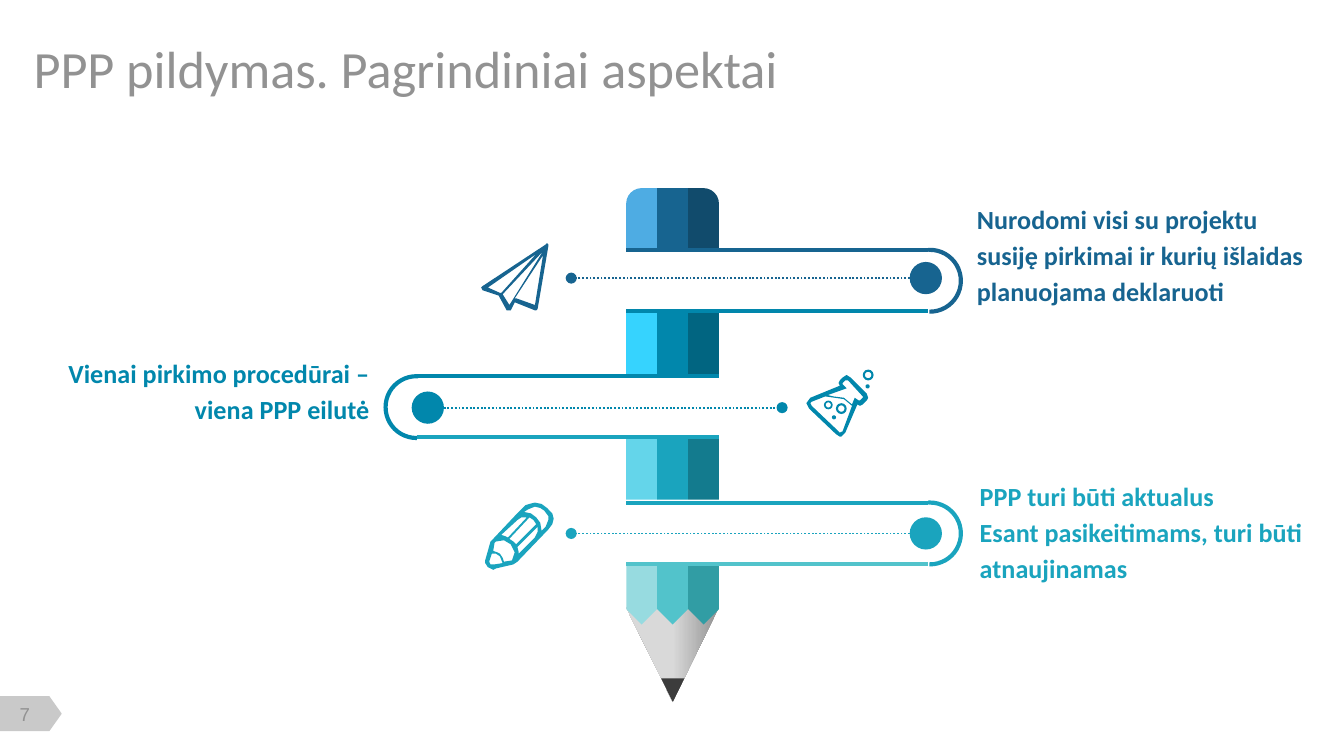
from lxml import etree
from pptx import Presentation
from pptx.dml.color import RGBColor
from pptx.enum import dml, shapes, text
from pptx.oxml.ns import qn
from pptx.util import Pt


class Theme:
    font, number_font = "Calibri", "Arial"
    title_size, label_size, number_size = 28, 14, 10
    grey, tag, wood, lead = "929292", "C9C9C9", "D9D9D9", "3C3C3C"
    navy, blue, teal, aqua = "176490", "0187AC", "1AA4BE", "52C3CB"
    # light, middle and dark side of each pencil section
    sections = [("4EACE3", navy, "114B6C"), ("36D3FE", blue, "016581"),
                ("64D5EA", teal, "137B8E"), ("97DBE0", aqua, "319DA4")]


KIND = shapes.MSO_SHAPE
ALIGN = text.PP_ALIGN

prs = Presentation()
prs.slide_width, prs.slide_height = Pt(720), Pt(405)
slide = prs.slides.add_slide(prs.slide_layouts[6])


def add_solid(kind, x, y, w, h, color, rotation=0):
    s = slide.shapes.add_shape(kind, Pt(x), Pt(y), Pt(w), Pt(h))
    s.shadow.inherit = False
    s.rotation = rotation
    s.fill.solid()
    s.fill.fore_color.rgb = RGBColor.from_string(color)
    s.line.fill.background()
    return s


def add_line(x1, y1, x2, y2, color, width):
    s = slide.shapes.add_connector(shapes.MSO_CONNECTOR.STRAIGHT,
                                   Pt(x1), Pt(y1), Pt(x2), Pt(y2))
    s.line.color.rgb = RGBColor.from_string(color)
    s.line.width = Pt(width)
    etree.SubElement(s._element.spPr, qn("a:effectLst"))
    return s


# Page number tag
add_solid(KIND.FLOWCHART_OFFPAGE_CONNECTOR, 7.2, 365.8, 18.7, 33.1, Theme.tag, 270)

# Pencil body: four sections of three sides
body_x, body_y, side_w, section_h, step = 335.5, 100.8, 16.56, 33.1, 66.9
body_right = body_x + 3 * side_w
for row, colors in enumerate(Theme.sections[:3]):
    for col, color in enumerate(colors):
        rounded = row == 0 and col != 1
        s = add_solid(KIND.ROUND_1_RECTANGLE if rounded else KIND.RECTANGLE,
                      body_x + col * side_w, body_y + row * step, side_w, section_h, color)
        if rounded:
            s.adjustments[0] = 0.5
            if col == 0:
                s._element.spPr.xfrm.set("flipH", "1")

# Pencil tip
wood = add_solid(KIND.ISOSCELES_TRIANGLE, body_x, 325.4, 3 * side_w, 50.4, Theme.wood, 180)
wood.fill.gradient()
wood.fill.gradient_angle = 0
for stop, position, color in zip(wood.fill.gradient_stops, (0, 0.5), (Theme.grey, Theme.wood)):
    stop.position = position
    stop.color.rgb = RGBColor.from_string(color)
add_solid(KIND.ISOSCELES_TRIANGLE, 354.2, 363.5, 12.4, 12.6, Theme.lead, 180)
turn = (section_h - side_w) / 2
for col, color in enumerate(Theme.sections[3]):
    add_solid(KIND.PENTAGON, body_x + col * side_w - turn, body_y + 3 * step + turn,
              section_h, side_w, color, 90)

# Bands: top, top and bottom colours, rail ends, cap left, cap angles,
# dot centre, far end and height of the dotted line
right_cap, left_cap = (160.04, 54.54), (53.46, 163.96)
bands = [
    (133.9, Theme.navy, Theme.blue, 497, body_x, 481.7, right_cap, 496, 306, 149),
    (201.6, Theme.blue, Theme.teal, 223.5, body_right, 206.6, left_cap, 229.2, 419, 218.4),
    (269.3, Theme.teal, Theme.aqua, 497, body_x, 481.7, right_cap, 496, 306, 285.8),
]
dot = 17.3
for top, color, lower, outer, inner, cap_x, angles, dot_x, far_x, mid in bands:
    cap = slide.shapes.add_shape(KIND.ARC, Pt(cap_x), Pt(top), Pt(section_h), Pt(section_h))
    cap.shadow.inherit = False
    cap.fill.background()
    cap.line.color.rgb = RGBColor.from_string(color)
    cap.line.width = Pt(2.25)
    cap.adjustments[0], cap.adjustments[1] = angles
    add_line(outer, top, inner, top, color, 2.25)
    add_line(outer, top + section_h - 0.4, inner, top + section_h - 0.4, lower, 2.25)
    add_solid(KIND.OVAL, dot_x - dot / 2, mid - dot / 2, dot, dot, color)
    dotted = add_line(dot_x, mid, far_x, mid, color, 1)
    dotted.line.dash_style = dml.MSO_LINE.ROUND_DOT
    for end in ("a:headEnd", "a:tailEnd"):
        etree.SubElement(dotted.line._ln, qn(end), type="oval")

# Texts: box, lines, alignment, font, size, colour, bold
label = (Theme.font, Theme.label_size)
texts = [
    ((18, 22.3, 546.5, 28.1), ["PPP pildymas. Pagrindiniai aspektai"],
     ALIGN.LEFT, Theme.font, Theme.title_size, Theme.grey, False),
    ((1.4, 376.6, 23.8, 12.2), ["7"],
     ALIGN.CENTER, Theme.number_font, Theme.number_size, Theme.grey, False),
    ((35.3, 190.8, 162.7, 37.4), ["Vienai pirkimo procedūrai –", "viena PPP eilutė"],
     ALIGN.RIGHT, *label, Theme.blue, True),
    ((523.4, 108, 180, 57.6), ["Nurodomi visi su projektu", "susiję pirkimai ir kurių išlaidas",
                               "planuojama deklaruoti"],
     ALIGN.LEFT, *label, Theme.navy, True),
    ((524.9, 256.3, 177.8, 57.6), ["PPP turi būti aktualus", "Esant pasikeitimams, turi būti",
                                   "atnaujinamas"],
     ALIGN.LEFT, *label, Theme.teal, True),
]
for box, lines, align, font, size, color, bold in texts:
    tf = slide.shapes.add_textbox(*map(Pt, box)).text_frame
    tf.margin_left = tf.margin_right = tf.margin_top = tf.margin_bottom = 0
    tf.word_wrap = False
    tf.vertical_anchor = text.MSO_ANCHOR.MIDDLE
    tf.text = "\n".join(lines)
    for i, p in enumerate(tf.paragraphs):
        p.alignment = align
        p.space_before = Pt(2.5 if i else 0)
        r = p.runs[0]
        r.font.name, r.font.size, r.font.bold = font, Pt(size), bold
        r.font.color.rgb = RGBColor.from_string(color)

# Icons: outline first, then holes, on a grid of 0.72 pt
plane = [
    [(50, 1), (49, 0), (48, 1), (1, 32), (0, 33), (1, 35), (13, 39), (19, 50), (22, 50),
     (25, 44), (40, 50), (41, 50), (42, 49), (50, 2)],
    [(5, 33), (41, 8), (15, 37), (14, 37)],
    [(16, 38), (46, 6), (21, 46)],
    [(40, 46), (26, 41), (25, 41), (46, 9)],
]
flask = [
    [(33, 2), (30, 0), (27, 2), (25, 4), (24, 6), (25, 8), (3, 17), (0, 21), (2, 25), (22, 44),
     (25, 46), (26, 46), (29, 43), (38, 22), (40, 23), (42, 22), (45, 19), (46, 17), (45, 14)],
    [(27, 42), (25, 43), (24, 42), (4, 23), (3, 21), (4, 20), (14, 16), (21, 17), (28, 18),
     (34, 23)],
    [(42, 17), (40, 19), (39, 19), (36, 17), (34, 22), (28, 17), (20, 16), (16, 15), (30, 10),
     (27, 7), (27, 6), (29, 4), (31, 4), (42, 16)],
]
pencil = [
    [(46, 4), (42, 1), (37, 0), (33, 1), (30, 2), (22, 10), (6, 27), (4, 29), (0, 43), (0, 45),
     (2, 48), (6, 50), (8, 49), (21, 46), (24, 44), (47, 20), (50, 16), (51, 12), (50, 8)],
    [(25, 37), (24, 33), (39, 18), (39, 22), (37, 26), (25, 38)],
    [(23, 31), (21, 29), (18, 27), (33, 11), (36, 13), (38, 16)],
    [(17, 26), (15, 25), (12, 24), (24, 13), (27, 11), (31, 11)],
    [(7, 46), (4, 46), (3, 44), (5, 38), (8, 38), (11, 40), (13, 45)],
    [(14, 44), (13, 41), (11, 38), (9, 37), (6, 36), (7, 30), (8, 29), (14, 28), (19, 31),
     (22, 37), (20, 43)],
    [(45, 18), (42, 21), (41, 15), (38, 11), (34, 8), (29, 7), (32, 5), (37, 3), (41, 4),
     (44, 6), (47, 10), (47, 13)],
]
for contours, x, y, color in [(plane, 257.8, 130.3, Theme.navy), (flask, 432, 200.9, Theme.blue),
                              (pencil, 259.9, 269.3, Theme.teal)]:
    outline, *holes = contours
    builder = slide.shapes.build_freeform(*outline[0], scale=Pt(0.72))
    builder.add_line_segments(outline[1:], close=True)
    for hole in holes:
        builder.move_to(*hole[0])
        builder.add_line_segments(hole[1:], close=True)
    s = builder.convert_to_shape(Pt(x), Pt(y))
    s.shadow.inherit = False
    s.fill.solid()
    s.fill.fore_color.rgb = RGBColor.from_string(color)
    s.line.fill.background()

# Bubbles in and above the flask
for x, y, size in [(447.8, 216, 5.8), (462.2, 198, 5.8), (441.4, 214.6, 4.7)]:
    ring = add_solid(KIND.DONUT, x, y, size, size, Theme.blue)
    ring.adjustments[0] = 0.2
for x, y in [(445.7, 222.5), (463.7, 205.9)]:
    add_solid(KIND.OVAL, x, y, 2.2, 2.2, Theme.blue)

prs.save("out.pptx")
